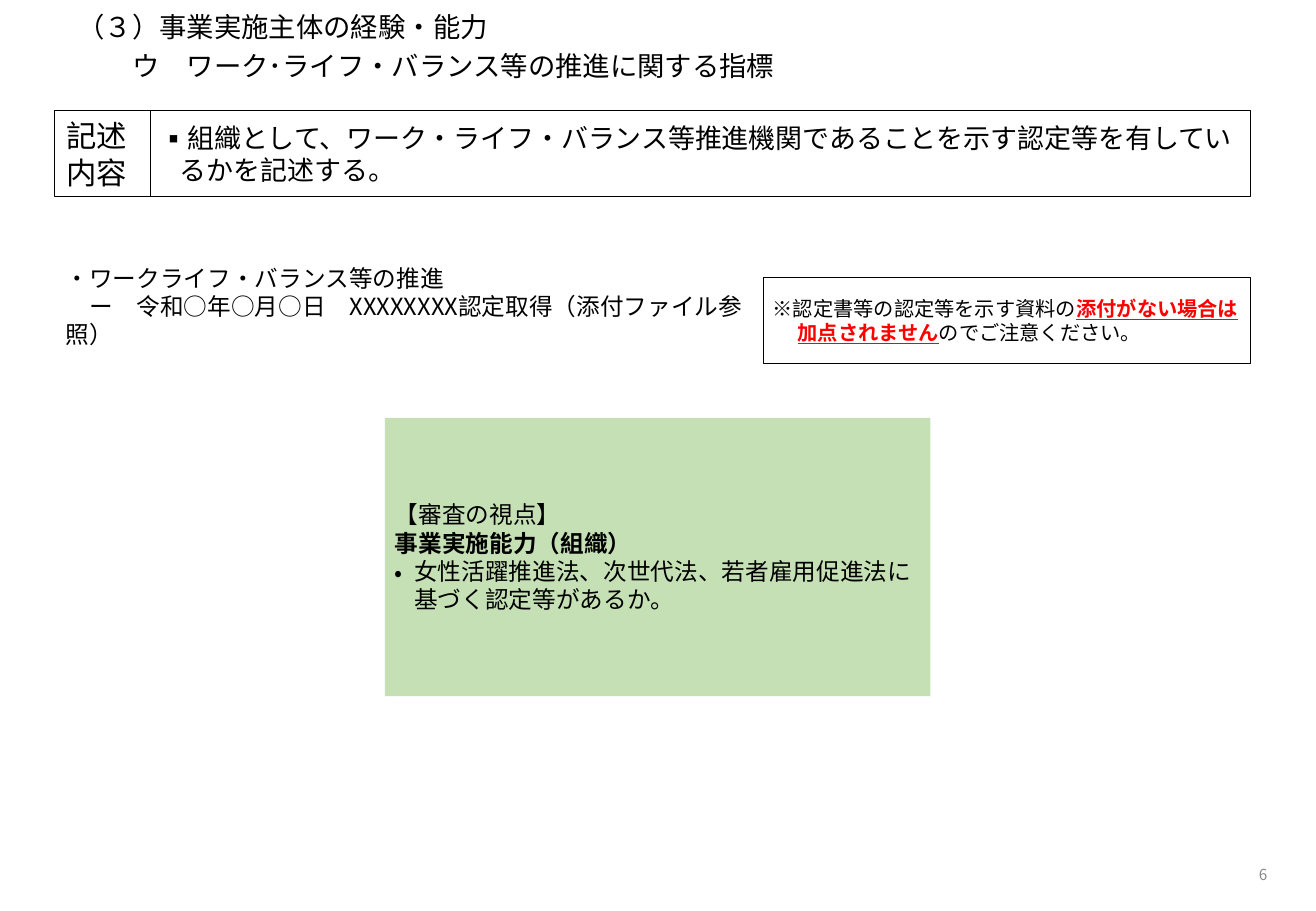
from lxml import etree
from pptx import Presentation
from pptx.dml.color import RGBColor
from pptx.enum import shapes, text
from pptx.oxml import ns
from pptx.util import Pt

FONT = "Noto Sans CJK JP"
BLACK, WHITE, RED, GREEN, GRAY = "000000", "FFFFFF", "FF0000", "C5E0B4", "898989"
RECT = shapes.MSO_SHAPE.RECTANGLE
TOP, MIDDLE = text.MSO_ANCHOR.TOP, text.MSO_ANCHOR.MIDDLE
ALERT = dict(color=RED, bold=True, underline=True)

# Content: a paragraph is (list of (words, format), paragraph format)
TITLE = [
    ([("（３）事業実施主体の経験・能力", {})], {}),
    ([("ウ　ワーク･ライフ・バランス等の推進に関する指標", {})],
     dict(left=32.4, before=3.7)),
]
DESCRIPTION = [
    ([("組織として、ワーク・ライフ・バランス等推進機関であることを示す認定等を有しているかを記述する。", {})],
     dict(bullet="▪", left=11.5, first=-11.5)),
]
HEADING = [([("記述内容", {})], {})]
VIEWPOINT = [
    ([("【審査の視点】", {})], {}),
    ([("事業実施能力（組織）", dict(bold=True))], {}),
    ([("女性活躍推進法、次世代法、若者雇用促進法に基づく認定等があるか。", {})],
     dict(bullet="•", left=11.5, first=-11.5)),
]
EXAMPLE = [
    ([("・ワークライフ・バランス等の推進", {})], {}),
    ([("ー　令和○年○月○日　XXXXXXXX認定取得（添付ファイル参照）", {})], dict(first=14)),
]
NOTE = [
    ([("※認定書等の認定等を示す資料の", {}), ("添付がない場合は", ALERT)], {}),
    ([("加点されません", ALERT), ("のでご注意ください。", {})], dict(first=14.8)),
]
PAGE_NUMBER = [([("6", {})], dict(align=text.PP_ALIGN.RIGHT))]

# Shared edges of the layout, in points
LEFT, RIGHT, BODY_LEFT = 32.4, 741.2, 38.9
ROW_TOP, ROW_HEIGHT, HEADING_WIDTH = 65.5, 51.1, 56.9
NOTE_LEFT = 452.2

deck = Presentation()
deck.slide_width, deck.slide_height = Pt(780), Pt(540)
page = deck.slides.add_slide(deck.slide_layouts[6])


def rgb(value):
    return RGBColor.from_string(value)


def write(box, paragraphs, size, color=BLACK, anchor=MIDDLE, insets=(7.2, 3.6, 7.2, 3.6)):
    """Fill a box with formatted paragraphs."""
    frame = box.text_frame
    frame.word_wrap = True
    frame.vertical_anchor = anchor
    frame.margin_left, frame.margin_top, frame.margin_right, frame.margin_bottom = map(Pt, insets)
    for index, (spans, layout) in enumerate(paragraphs):
        para = frame.add_paragraph() if index else frame.paragraphs[0]
        para.alignment = layout.get("align", text.PP_ALIGN.LEFT)
        para.line_spacing = Pt(round(size * 1.2, 1))
        para.space_before = Pt(layout.get("before", 0))
        properties = para._p.get_or_add_pPr()
        properties.set("marL", str(Pt(layout.get("left", 0))))
        properties.set("indent", str(Pt(layout.get("first", 0))))
        if "bullet" in layout:
            etree.SubElement(properties, ns.qn("a:buFont"), typeface=FONT)
            etree.SubElement(properties, ns.qn("a:buChar"), char=layout["bullet"])
        for words, style in spans:
            span = para.add_run()
            span.text = words
            font = span.font
            font.name, font.size = FONT, Pt(size)
            font.bold = style.get("bold", False)
            font.underline = style.get("underline", False)
            font.color.rgb = rgb(style.get("color", color))
            etree.SubElement(span._r.get_or_add_rPr(), ns.qn("a:ea"), typeface=FONT)


def add_text(place, paragraphs, size, **options):
    write(page.shapes.add_textbox(*map(Pt, place)), paragraphs, size, **options)


def add_panel(place, paragraphs, size, kind=RECT, fill=WHITE, outlined=True, **options):
    box = page.shapes.add_shape(kind, *map(Pt, place))
    box.shadow.inherit = False
    box.fill.solid()
    box.fill.fore_color.rgb = rgb(fill)
    if outlined:
        box.line.color.rgb = rgb(BLACK)
        box.line.width = Pt(0.5)
    else:
        box.line.fill.background()
    if kind == shapes.MSO_SHAPE.OCTAGON:
        box.adjustments[0] = 0
    write(box, paragraphs, size, **options)


# Title
add_text((BODY_LEFT, 3.6, 702, 47.5), TITLE, 16.2, insets=(7.2, 0, 7.2, 0))

# Description row
description_left = LEFT + HEADING_WIDTH
add_panel((description_left, ROW_TOP, RIGHT - description_left, ROW_HEIGHT),
          DESCRIPTION, 16, insets=(5.8, 0, 2.9, 0))
add_panel((LEFT, ROW_TOP, HEADING_WIDTH, ROW_HEIGHT), HEADING, 18)

# Review viewpoint
add_panel((228.2, 247.7, 323.3, 164.9), VIEWPOINT, 14, kind=shapes.MSO_SHAPE.OCTAGON,
          fill=GREEN, outlined=False, insets=(5.8, 0, 0, 0))

# Example entry and its note
add_panel((BODY_LEFT, 156.2, 424.8, 62.6), EXAMPLE, 14, outlined=False,
          anchor=TOP, insets=(0, 0, 0, 0))
add_panel((NOTE_LEFT, 164.2, RIGHT - NOTE_LEFT, ROW_HEIGHT), NOTE, 12, insets=(5.8, 0, 0, 0))

# Page number
add_text((582.5, 504, 175.7, 28.8), PAGE_NUMBER, 9, color=GRAY)

deck.save("out.pptx")
